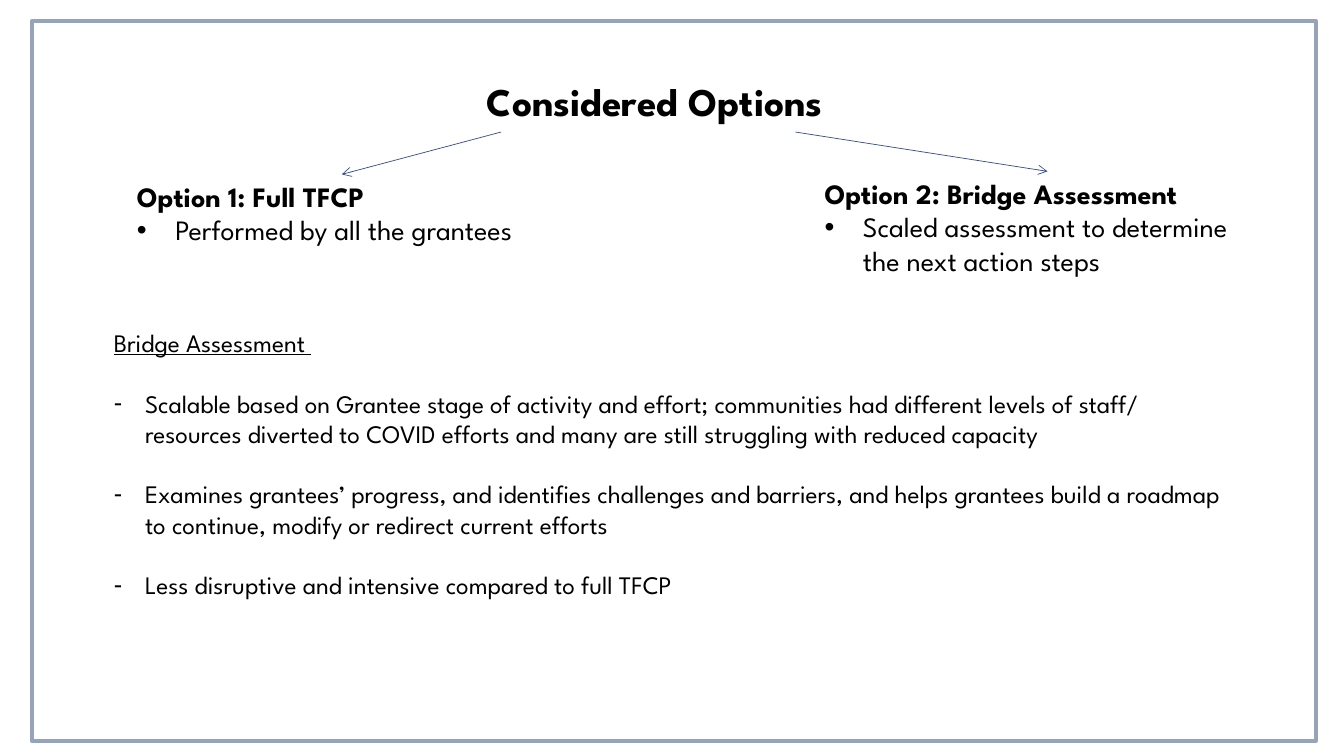
from lxml.etree import SubElement
from pptx import Presentation
from pptx.dml.color import RGBColor
from pptx.enum.shapes import MSO_CONNECTOR, MSO_SHAPE
from pptx.oxml.ns import qn
from pptx.util import Inches, Pt

# Content: each paragraph is (text, bullet, format values)
FONT = "League Spartan"
BLACK, FRAME, ARROW = "000000", "97A3B9", "374C81"
BOLD, PLAIN, UNDERLINED = {"bold": True}, {}, {"underline": True}

TITLE = [("Considered Options", None, BOLD)]
OPTION_1 = [
    ("Option 1: Full TFCP", None, BOLD),
    ("Performed by all the grantees", "•", PLAIN),
]
OPTION_2 = [
    ("Option 2: Bridge Assessment", None, BOLD),
    ("Scaled assessment to determine the next action steps", "•", PLAIN),
]
BRIDGE = [
    ("Bridge Assessment ", None, UNDERLINED),
    ("Scalable based on Grantee stage of activity and effort; communities had "
     "different levels of staff/ resources diverted to COVID efforts and many "
     "are still struggling with reduced capacity", "-", PLAIN),
    ("Examines grantees’ progress, and identifies challenges and barriers, and "
     "helps grantees build a roadmap to continue, modify or redirect current "
     "efforts", "-", PLAIN),
    ("Less disruptive and intensive compared to full TFCP", "-", PLAIN),
]

# Layout in inches: box, paragraphs, size, indent, space before in points
BLOCKS = [
    ((4.11, 0.72, 4.8, 1.18), TITLE, 28, 0.62, 0),
    ((1.26, 1.73, 4.25, 1.11), OPTION_1, 20, 0.38, 0),
    ((8.08, 1.7, 4.61, 1.45), OPTION_2, 20, 0.38, 0),
    ((1.03, 3.2, 11.38, 3.74), BRIDGE, 18, 0.31, 21.6),
]
FRAME_BOX = (0.32, 0.21, 12.73, 7.14)
ARROWS = [(4.97, 1.31, 3.39, 1.73), (7.89, 1.31, 10.39, 1.7)]


def color(hex_code):
    return RGBColor.from_string(hex_code)


def inches(lengths):
    return [Inches(length) for length in lengths]


def set_indent(paragraph, indent, bullet):
    properties = paragraph._p.get_or_add_pPr()
    properties.set("marL", str(Inches(indent)))
    if bullet:
        properties.set("indent", str(-Inches(indent)))
        SubElement(properties, qn("a:buFont")).set("typeface", "Arial")
        SubElement(properties, qn("a:buChar")).set("char", bullet)


def add_block(slide, box, paragraphs, size, indent, gap):
    frame = slide.shapes.add_textbox(*inches(box)).text_frame
    frame.word_wrap = True
    for row, (text, bullet, formats) in enumerate(paragraphs):
        paragraph = frame.add_paragraph() if row else frame.paragraphs[0]
        if row and gap:
            paragraph.space_before = Pt(gap)
        if bullet or paragraphs is TITLE:
            set_indent(paragraph, indent, bullet)
        run = paragraph.add_run()
        run.text = text
        for name, value in {"name": FONT, "size": Pt(size), **formats}.items():
            setattr(run.font, name, value)
        run.font.color.rgb = color(BLACK)


def add_arrow(slide, ends):
    arrow = slide.shapes.add_connector(MSO_CONNECTOR.STRAIGHT, *inches(ends))
    arrow.line.color.rgb = color(ARROW)
    arrow.line.width = Pt(0.5)
    SubElement(arrow.line._get_or_add_ln(), qn("a:tailEnd")).set("type", "arrow")
    SubElement(arrow._element.spPr, qn("a:effectLst"))


def main():
    deck = Presentation()
    deck.slide_width, deck.slide_height = inches((13.33, 7.5))
    slide = deck.slides.add_slide(deck.slide_layouts[6])

    # Border around the slide
    border = slide.shapes.add_shape(MSO_SHAPE.RECTANGLE, *inches(FRAME_BOX))
    border.shadow.inherit = False
    border.fill.background()
    border.line.color.rgb = color(FRAME)
    border.line.width = Pt(3)

    # Title, the two options and the bridge details
    for block in BLOCKS:
        add_block(slide, *block)

    # Arrows from the title to each option
    for ends in ARROWS:
        add_arrow(slide, ends)

    deck.save("out.pptx")


if __name__ == "__main__":
    main()
